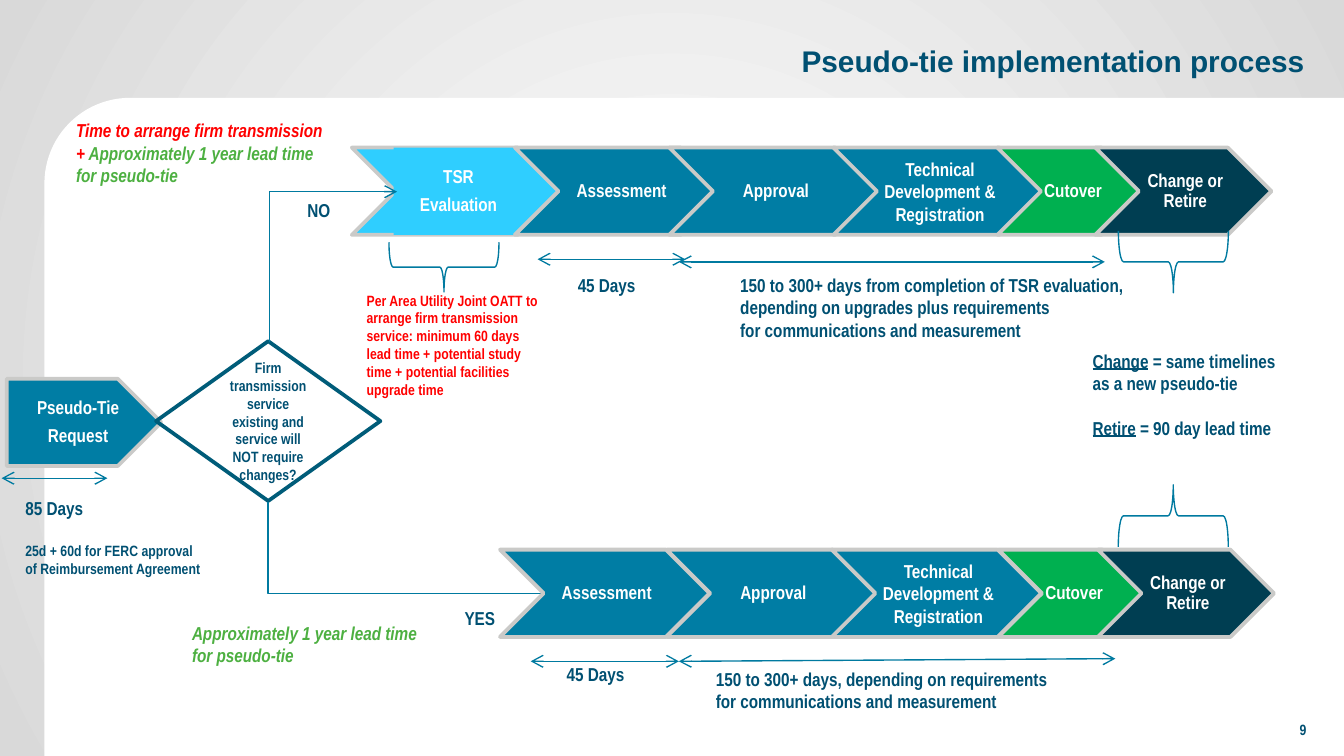
from dataclasses import dataclass

from lxml import etree
from pptx import Presentation
from pptx.dml.color import RGBColor
from pptx.enum.shapes import MSO_CONNECTOR, MSO_SHAPE
from pptx.enum.text import MSO_ANCHOR, PP_ALIGN
from pptx.oxml.ns import qn
from pptx.util import Cm, Pt

CHEVRON, PENTAGON = MSO_SHAPE.CHEVRON, MSO_SHAPE.PENTAGON
RECTANGLE, DECISION = MSO_SHAPE.RECTANGLE, MSO_SHAPE.FLOWCHART_DECISION
BRACE, PANEL = MSO_SHAPE.RIGHT_BRACE, MSO_SHAPE.ROUND_1_RECTANGLE
STRAIGHT, ELBOW = MSO_CONNECTOR.STRAIGHT, MSO_CONNECTOR.ELBOW
LEFT, CENTER, RIGHT = PP_ALIGN.LEFT, PP_ALIGN.CENTER, PP_ALIGN.RIGHT
TOP, MIDDLE = MSO_ANCHOR.TOP, MSO_ANCHOR.MIDDLE

NAVY, BLUE, SKY, DARK = "005072", "007DA4", "2FCEFF", "003E52"
GREEN, LEAF, RED, WHITE = "00B050", "4DB041", "FF0000", "FFFFFF"
GRAY, LINE, DIAMOND_LINE = "CACAC8", "007AA0", "005C79"
STEP_HEIGHT = 1.65
TOP_ROW, BOTTOM_ROW = 2.79, 10.39


@dataclass
class Span:
    text: str
    color: str = NAVY
    size: float = 10
    italic: bool = False
    underline: bool = False
    font: str = "Arial Narrow"


@dataclass
class Note:
    box: tuple
    paragraphs: list  # one list of spans for each paragraph
    wrap: bool = False
    align: int = LEFT
    anchor: int = TOP
    gap: float = 0  # points between paragraphs


@dataclass
class Step:
    lines: list
    left: float
    top: float
    width: float = 3.96
    fill: str = BLUE
    spacing: float = 0.9


def rgb(color: str) -> RGBColor:
    return RGBColor.from_string(color)


def write(text_frame, paragraphs: list, align: int, anchor: int,
          gap: float = 0, spacing: float = 1.0) -> None:
    text_frame.vertical_anchor = anchor
    for index, spans in enumerate(paragraphs):
        paragraph = text_frame.add_paragraph() if index else text_frame.paragraphs[0]
        paragraph.alignment = align
        paragraph.line_spacing = spacing
        paragraph.space_before = Pt(gap if index else 0)
        for span in spans:
            run = paragraph.add_run()
            run.text = span.text
            font = run.font
            font.name, font.size, font.bold = span.font, Pt(span.size), True
            font.italic, font.underline = span.italic, span.underline
            font.color.rgb = rgb(span.color)


def add_note(slide, note: Note) -> None:
    text_frame = slide.shapes.add_textbox(*map(Cm, note.box)).text_frame
    text_frame.word_wrap = note.wrap
    write(text_frame, note.paragraphs, note.align, note.anchor, note.gap)


def add_shape(slide, kind: int, box: tuple, fill: str = "", line: str = "",
              weight: float = 2, rotation: float = 0):
    shape = slide.shapes.add_shape(kind, *map(Cm, box))
    shape.shadow.inherit = False
    shape.rotation = rotation
    if fill:
        shape.fill.solid()
        shape.fill.fore_color.rgb = rgb(fill)
    else:
        shape.fill.background()
    if line:
        shape.line.color.rgb = rgb(line)
        shape.line.width = Pt(weight)
    else:
        shape.line.fill.background()
    return shape


def add_label(slide, lines: list, box: tuple, fill: str = "", spacing: float = 0.9) -> None:
    text_frame = add_shape(slide, RECTANGLE, box, fill).text_frame
    text_frame.word_wrap = True
    text_frame.margin_left, text_frame.margin_right = Cm(0.1), Cm(0.03)
    text_frame.margin_top = text_frame.margin_bottom = Cm(0.08)
    write(text_frame, [[Span(line, WHITE)] for line in lines], CENTER, MIDDLE, 4, spacing)


def add_step(slide, step: Step) -> None:
    add_shape(slide, CHEVRON, (step.left, step.top, step.width, STEP_HEIGHT), step.fill, GRAY)
    label_box = (step.left + 0.2 * step.width, step.top, 0.6 * step.width, STEP_HEIGHT)
    add_label(slide, step.lines, label_box, SKY if step.fill == SKY else "", step.spacing)


def add_arrow(slide, start: tuple, end: tuple, kind: int = STRAIGHT, both: bool = True):
    connector = slide.shapes.add_connector(kind, *map(Cm, start + end))
    connector.line.color.rgb = rgb(LINE)
    connector.line.width = Pt(0.75)
    properties = connector.element.spPr
    outline = properties.find(qn("a:ln"))
    for tag in (["a:headEnd"] if both else []) + ["a:tailEnd"]:
        etree.SubElement(outline, qn(tag), type="arrow")
    etree.SubElement(properties, qn("a:effectLst"))
    return connector


def add_elbow(slide, start: tuple, end: tuple, rotation: float, flips: tuple) -> None:
    connector = add_arrow(slide, start, end, ELBOW, both=False)
    connector.rotation = rotation
    properties = connector.element.spPr
    properties.find(qn("a:prstGeom")).set("prst", "bentConnector2")
    for flip in flips:
        properties.find(qn("a:xfrm")).set(flip, "1")


def add_background(slide) -> None:
    fill = slide.background.fill
    fill.gradient()
    for stop, color in zip(fill.gradient_stops, (WHITE, "D9D9D9")):
        stop.color.rgb = rgb(color)
    gradient = slide.element.find(".//" + qn("a:gradFill"))
    gradient.remove(gradient.find(qn("a:lin")))
    circle = etree.SubElement(gradient, qn("a:path"), path="circle")
    etree.SubElement(circle, qn("a:fillToRect"), l="50000", t="50000", r="50000", b="50000")
    panel = add_shape(slide, PANEL, (0.84, 1.85, 24.56, 12.44), WHITE)
    panel.adjustments[0] = 0.13
    panel.element.spPr.find(qn("a:xfrm")).set("flipH", "1")


TECHNICAL = ["Technical Development & Registration"]
STEPS = [
    Step(["TSR", "Evaluation"], 6.65, TOP_ROW, fill=SKY),
    Step(["Assessment"], 9.73, TOP_ROW),
    Step(["Approval"], 12.65, TOP_ROW),
    Step(TECHNICAL, 15.75, TOP_ROW, spacing=1.0),
    Step(["Cutover"], 18.85, TOP_ROW, 2.79, GREEN),
    Step(["Change or Retire"], 20.7, TOP_ROW, 3.33, DARK),
    Step(["Approval"], 12.6, BOTTOM_ROW),
    Step(TECHNICAL, 15.72, BOTTOM_ROW, spacing=1.0),
    Step(["Cutover"], 18.87, BOTTOM_ROW, 2.79, GREEN),
    Step(["Change or Retire"], 20.75, BOTTOM_ROW, 3.33, DARK),
]
LAST_STEP = Step(["Assessment"], 9.45, BOTTOM_ROW)  # covers the end of the YES arrow

NOTES = [
    Note((1.14, 0.48, 23.77, 1.32),
         [[Span("Pseudo-tie implementation process", size=16, font="Arial")]],
         True, RIGHT, MIDDLE),
    Note((19.02, 13.49, 5.92, 0.79), [[Span("9", size=8)]], True, RIGHT),
    Note((5.56, 3.63, 0.94, 0.69), [[Span("NO")]]),
    Note((8.53, 11.35, 1.09, 0.69), [[Span("YES")]]),
    Note((10.67, 5.05, 1.6, 0.69), [[Span("45 Days")]]),
    Note((10.46, 12.4, 1.6, 0.69), [[Span("45 Days")]]),
    Note((13.74, 5.05, 7.87, 1.55),
         [[Span("150 to 300+ days from completion of TSR evaluation,")],
          [Span("depending on upgrades plus requirements")],
          [Span("for communications and measurement")]]),
    Note((13.28, 12.5, 6.88, 1.55),
         [[Span("150 to 300+ days, depending on requirements")],
          [Span("for communications and measurement")]]),
    Note((20.4, 6.48, 3.96, 1.96),
         [[Span("Change", underline=True), Span(" = same timelines as a new pseudo-tie")],
          [Span("Retire", underline=True), Span(" = 90 day lead time")]], True, gap=12),
    Note((6.68, 5.38, 3.86, 2.31),
         [[Span("Per Area Utility Joint OATT to arrange firm transmission service: "
                "minimum 60 days lead time + potential study time + potential "
                "facilities upgrade time", RED, 8)]], True),
    Note((3.38, 11.63, 4.78, 1.12),
         [[Span("Approximately 1 year lead time", LEAF, italic=True)],
          [Span("for pseudo-tie", LEAF, italic=True)]]),
    Note((1.19, 2.13, 5.28, 1.55),
         [[Span("Time to arrange firm transmission", RED, italic=True)],
          [Span("+", RED, italic=True),
           Span(" Approximately 1 year lead time", LEAF, italic=True)],
          [Span("for pseudo-tie", LEAF, italic=True)]]),
    Note((0.23, 9.27, 3.89, 1.8),
         [[Span("85 Days")],
          [Span("25d + 60d for FERC approval of Reimbursement Agreement", size=8)]],
         True, gap=12),
]
DURATIONS = [  # start and end of each double arrow
    ((12.83, 4.95), (20.88, 4.95)), ((12.83, 12.5), (21.08, 12.45)),
    ((10.16, 4.9), (12.95, 4.9)), ((10.03, 12.5), (12.83, 12.5)),
    ((0.03, 9.04), (2.03, 9.04)),
]
BRACES = [((7.92, 4.01, 0.94, 2.08), 90), ((21.59, 8.71, 1.17, 2.08), 270),
          ((21.59, 3.91, 1.17, 2.08), 90)]


def main() -> None:
    presentation = Presentation()
    presentation.slide_width, presentation.slide_height = Cm(25.4), Cm(14.29)
    slide = presentation.slides.add_slide(presentation.slide_layouts[6])
    add_background(slide)

    # Request and process steps
    add_shape(slide, PENTAGON, (0.13, 7.16, 2.92, STEP_HEIGHT), BLUE, GRAY)
    add_label(slide, ["Pseudo-Tie", "Request"], (0.13, 7.16, 2.62, STEP_HEIGHT))
    for step in STEPS:
        add_step(slide, step)

    # Decision and its two branches
    decision = add_shape(slide, DECISION, (2.95, 6.45, 4.24, 3.02), line=DIAMOND_LINE)
    decision.text_frame.word_wrap = True
    question = "Firm transmission service existing and service will NOT require changes?"
    write(decision.text_frame, [[Span(question, size=8)]], CENTER, MIDDLE)
    add_elbow(slide, (8.38, 6.17), (10.11, 14.53), 270, ("flipH",))
    add_elbow(slide, (4.88, 3.84), (7.72, 6.25), 90, ("flipH", "flipV"))
    add_step(slide, LAST_STEP)

    # Durations, braces and notes
    for start, end in DURATIONS:
        add_arrow(slide, start, end)
    for box, rotation in BRACES:
        add_shape(slide, BRACE, box, line=LINE, weight=0.75, rotation=rotation)
    for note in NOTES:
        add_note(slide, note)

    presentation.save("out.pptx")


if __name__ == "__main__":
    main()
